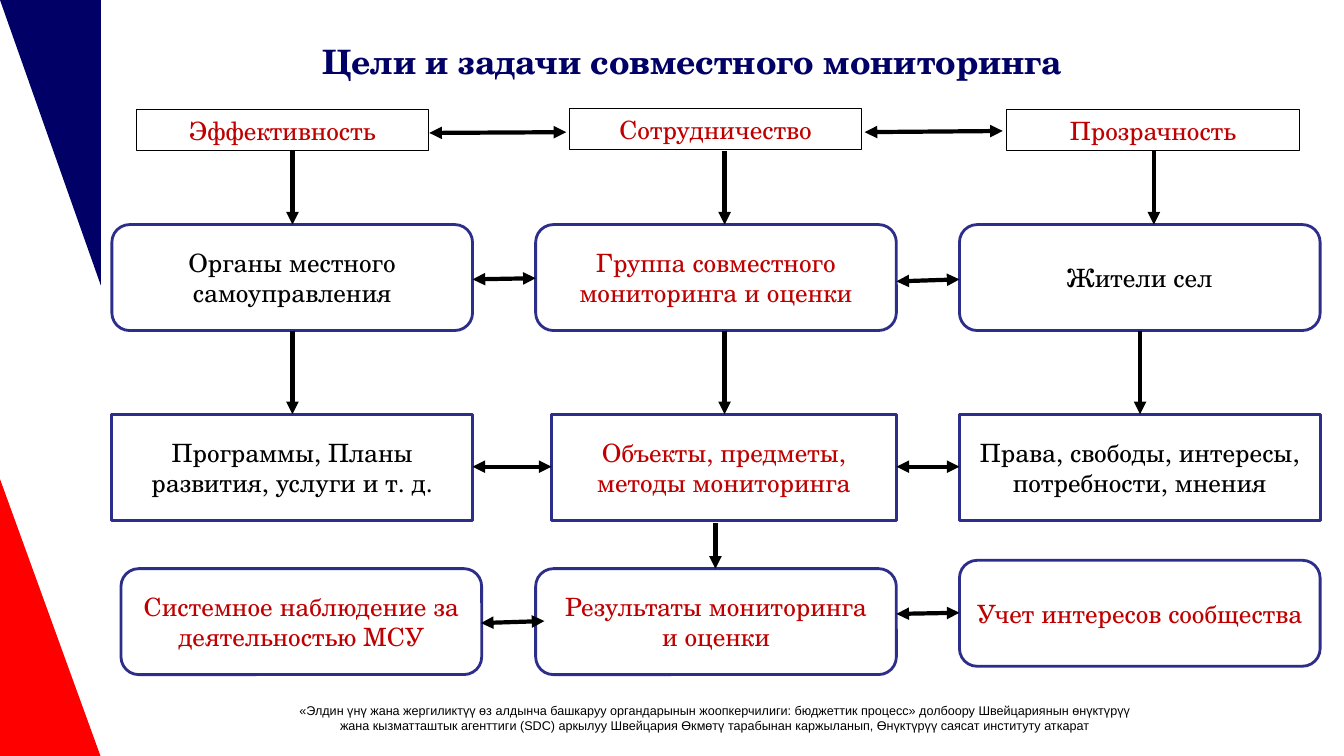
from pptx import Presentation
from pptx.dml.color import RGBColor
from pptx.enum.shapes import MSO_CONNECTOR as Link, MSO_SHAPE as Shape
from pptx.enum.text import MSO_ANCHOR as Anchor, PP_ALIGN as Align
from pptx.oxml.ns import qn
from pptx.util import Cm, Pt
from lxml.etree import SubElement

SERIF = "TeX Gyre Schola"
BLACK, RED, NAVY, EDGE = "000000", "C00000", "000066", "2D2D8A"
COLS = [2.82 + 10.68 * i for i in range(3)]
WIDE, HIGH = 9.09, 2.67
ROW1, ROW2, ROW3 = 5.66, 10.44, 14.33
RIGHT = COLS[1] + WIDE

# kind, left, top, width, colour, text
BOXES = [
    (Shape.ROUNDED_RECTANGLE, COLS[0], ROW1, WIDE, BLACK, "Органы местного самоуправления"),
    (Shape.ROUNDED_RECTANGLE, COLS[1], ROW1, WIDE, RED, "Группа совместного мониторинга и оценки"),
    (Shape.ROUNDED_RECTANGLE, COLS[2], ROW1, WIDE, BLACK, "Жители сел"),
    (Shape.RECTANGLE, COLS[0], ROW2, WIDE, BLACK, "Программы, Планы развития, услуги и т. д."),
    (Shape.RECTANGLE, 13.9, ROW2, 8.69, RED, "Объекты, предметы, методы мониторинга"),
    (Shape.RECTANGLE, COLS[2], ROW2, WIDE, BLACK, "Права, свободы, интересы, потребности, мнения"),
    (Shape.ROUNDED_RECTANGLE, 3.05, ROW3, WIDE, RED, "Системное наблюдение за деятельностью МСУ"),
    (Shape.ROUNDED_RECTANGLE, COLS[1], ROW3, WIDE, RED, "Результаты мониторинга\nи оценки"),
    (Shape.ROUNDED_RECTANGLE, COLS[2], 14.12, WIDE, RED, "Учет интересов сообщества"),
]
# left, top, line width, text
GOALS = [
    (3.43, 2.77, 0.75, "Эффективность"),
    (14.35, 2.74, 0.5, "Сотрудничество"),
    (25.37, 2.77, 0.75, "Прозрачность"),
]
# x, top, bottom
DOWN = [
    (7.37, 3.81, ROW1), (18.26, 3.81, ROW1), (29.08, 3.81, ROW1),
    (7.37, ROW1 + HIGH, ROW2), (18.26, ROW1 + HIGH, ROW2), (28.73, ROW1 + HIGH, ROW2),
    (18.03, 13.18, ROW3),
]
# left, start height, right, end height
ACROSS = [
    (10.82, 3.35, 14.27, 3.33), (21.79, 3.33, 25.27, 3.3),
    (11.91, 7.04, COLS[1], 7.01), (RIGHT, 7.09, COLS[2], 7.04),
    (11.91, 11.76, 13.9, 11.76), (RIGHT, 11.76, COLS[2], 11.76),
    (12.12, 15.7, 13.72, 15.65), (RIGHT, 15.47, COLS[2], 15.44),
]
FOOT = (
    "«Элдин үнү жана жергиликтүү өз алдынча башкаруу органдарынын жоопкерчилиги: "
    "бюджеттик процесс» долбоору Швейцариянын ѳнүктүрүү\n"
    "жана кызматташтык агенттиги (SDC) аркылуу Швейцария Өкмөтү тарабынан "
    "каржыланып, Өнүктүрүү саясат институту аткарат"
)


def paint(text):
    return RGBColor.from_string(text)


def write(shape, text, color, size=18, face=SERIF, bold=False):
    frame = shape.text_frame
    frame.text = text
    frame.word_wrap = True
    frame.vertical_anchor = Anchor.MIDDLE
    for para in frame.paragraphs:
        para.alignment = Align.CENTER
        for run in para.runs:
            font = run.font
            font.name, font.size, font.bold = face, Pt(size), bold
            font.color.rgb = paint(color)


def draw(slide, kind, left, top, width, height, fill=None, edge=None, line=2):
    shape = slide.shapes.add_shape(kind, Cm(left), Cm(top), Cm(width), Cm(height))
    shape.shadow.inherit = False
    if fill:
        shape.fill.solid()
        shape.fill.fore_color.rgb = paint(fill)
    else:
        shape.fill.background()
    if edge:
        shape.line.color.rgb = paint(edge)
        shape.line.width = Pt(line)
    else:
        shape.line.fill.background()
    return shape


def arrow(slide, x1, y1, x2, y2, both=False):
    link = slide.shapes.add_connector(Link.STRAIGHT, Cm(x1), Cm(y1), Cm(x2), Cm(y2))
    link.line.color.rgb = paint(BLACK)
    link.line.width = Pt(3)
    stroke = link.line._get_or_add_ln()
    for end in ("a:headEnd", "a:tailEnd") if both else ("a:tailEnd",):
        SubElement(stroke, qn(end), type="triangle")
    SubElement(link._element.spPr, qn("a:effectLst"))


def head(slide, text):
    title = slide.shapes.title
    title.left, title.top = Cm(3.48), Cm(0.58)
    title.width, title.height = Cm(27.94), Cm(1.93)
    write(title, text, NAVY, 24, bold=True)


def main():
    deck = Presentation()
    deck.slide_width, deck.slide_height = Cm(33.87), Cm(19.05)
    slide = deck.slides.add_slide(deck.slide_layouts[5])

    draw(slide, Shape.RIGHT_TRIANGLE, 0, 12.07, 2.54, 7, "FF0000")
    draw(slide, Shape.RIGHT_TRIANGLE, 0, 0, 2.54, 7.19, NAVY).rotation = 180
    foot = slide.shapes.add_textbox(Cm(3.07), Cm(17.45), Cm(29.87), Cm(1.27))
    write(foot, FOOT, BLACK, 9, "Arial")
    head(slide, "Цели и задачи совместного мониторинга")

    for kind, left, top, width, color, text in BOXES:
        write(draw(slide, kind, left, top, width, HIGH, "FFFFFF", EDGE), text, color)
    for left, top, line, text in GOALS:
        write(draw(slide, Shape.RECTANGLE, left, top, 7.37, 1.02, None, BLACK, line), text, RED)
    for x, top, base in DOWN:
        arrow(slide, x, top, x, base)
    for ends in ACROSS:
        arrow(slide, *ends, both=True)

    deck.save("out.pptx")


if __name__ == "__main__":
    main()
